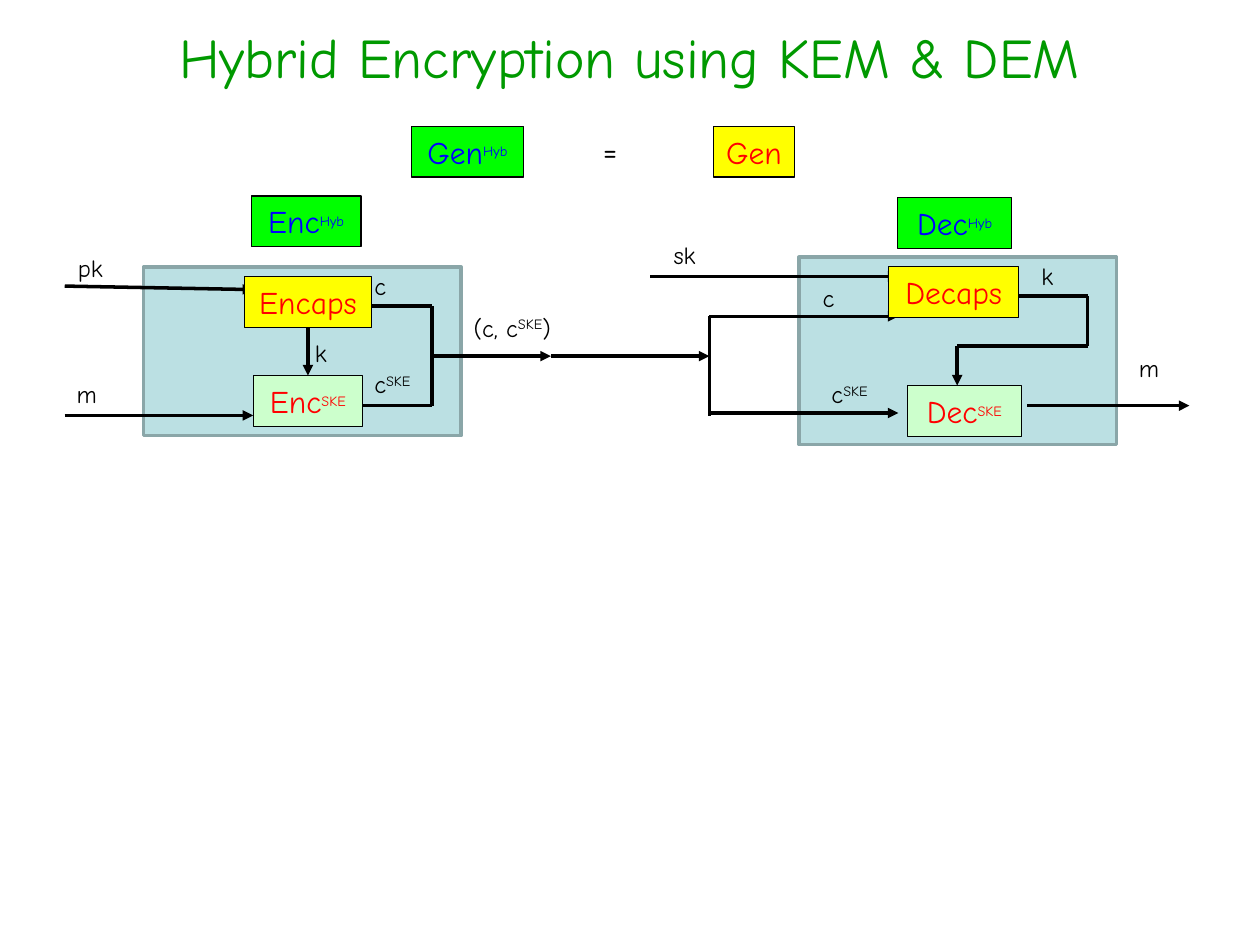
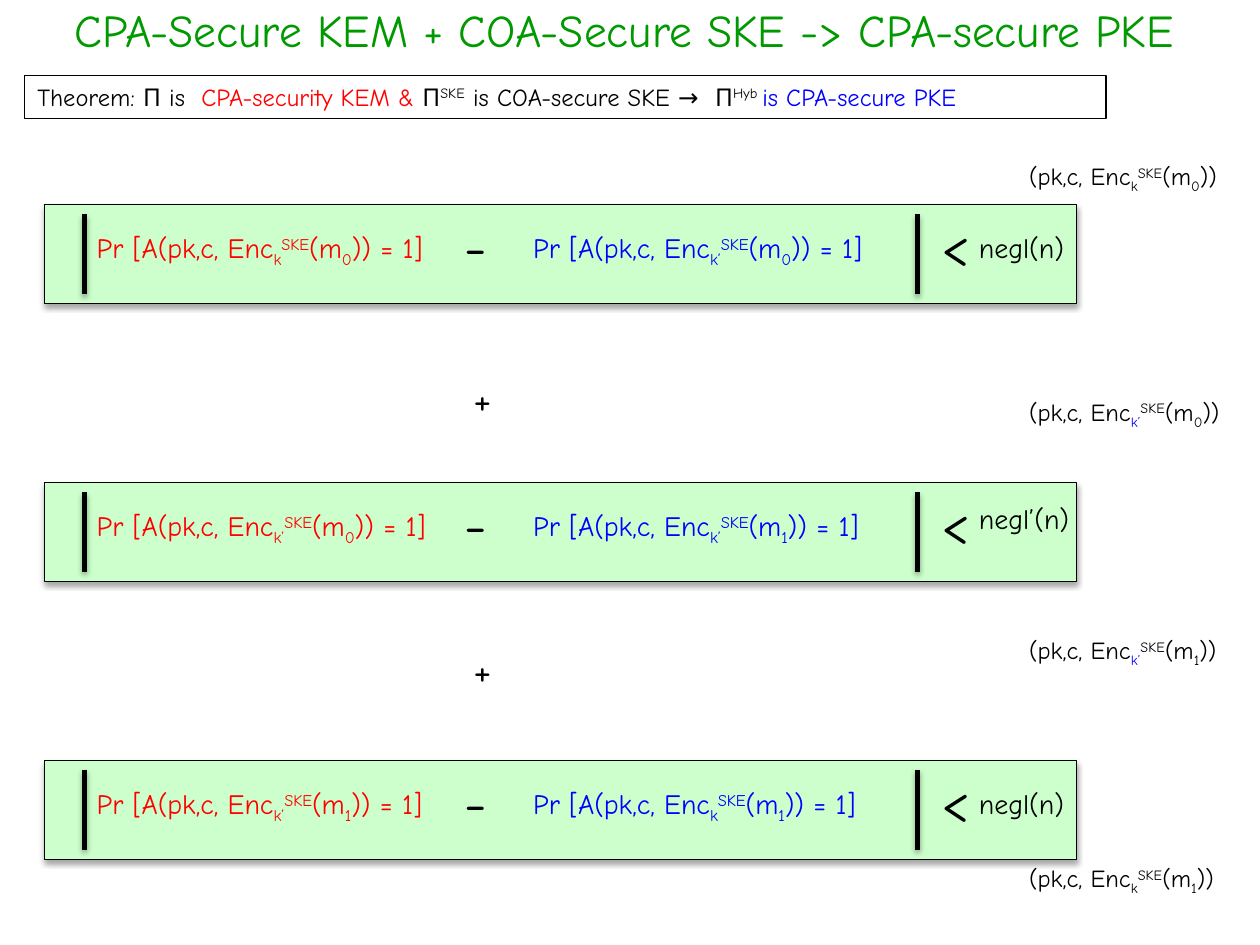
import pptx
import pptx.util
import pptx.dml.color
import pptx.enum.shapes
import pptx.enum.text
import lxml.etree
from pptx.oxml.ns import qn

Pt = pptx.util.Pt
RGB = pptx.dml.color.RGBColor
ALIGN = pptx.enum.text.PP_ALIGN

# Shared look
FONT = "Comic Neue"
BLACK = RGB(0, 0, 0)
RED = RGB(255, 0, 0)
BLUE = RGB(0, 0, 255)
TITLE = RGB(0, 0x99, 0)
GREEN = RGB(0, 255, 0)
YELLOW = RGB(255, 255, 0)
MINT = RGB(0xCC, 255, 0xCC)
TEAL = RGB(0xBB, 0xE0, 0xE3)
SLATE = RGB(0x8A, 0xA6, 0xA8)
BOX_H = 29
LABEL_H = 24.5

# In all texts "|" parts the runs; a run's first sign may set its format:
# "^" raises it, "_" lowers it, "~" spaces it widely.
MARKS = {"^": ("baseline", "30000"), "_": ("baseline", "-25000"),
         "~": ("spc", "460")}

# Slide 1: diagram content
PANELS = [(82, 152.5, 181.5, 96.5), (456.5, 147, 181.5, 107)]
BOXES = {  # name: (text, left, top, width, fill, text colour)
    "gen hyb": ("Gen|^Hyb", 235, 72.2, 64.3, GREEN, BLUE),
    "gen": ("Gen", 407.7, 72.2, 46.3, YELLOW, RED),
    "enc hyb": ("Enc|^Hyb", 143.7, 112, 62.6, GREEN, BLUE),
    "encaps": ("Encaps", 139.6, 158.2, 72.8, YELLOW, RED),
    "enc ske": ("Enc|^SKE", 144.7, 214.6, 62.6, MINT, RED),
    "decaps": ("Decaps", 507.7, 152.4, 74.5, YELLOW, RED),
    "dec ske": ("Dec|^SKE", 518.6, 220.3, 65, MINT, RED),
    "dec hyb": ("Dec|^Hyb", 513, 113, 65, GREEN, BLUE),
}
LABELS = [  # text, left, top, width
    ("m", 36.8, 213, 33),
    ("pk", 37.4, 141, 50),
    ("c", 206.8, 151.2, 40),
    ("c|^SKE", 206.8, 207.4, 57),
    ("(c, c|^SKE|)", 263.5, 175.2, 85),
    ("sk", 377.8, 133.8, 50),
    ("c", 463, 158.4, 56),
    ("k", 588, 145.5, 33),
    ("c|^SKE", 468, 213, 51),
    ("m", 643.7, 198, 33),
    ("k", 172.8, 189.4, 33),
]
WIRES = [  # corner points, arrow at the end
    ([(37, 237.4), (144.7, 237.4)], True),
    ([(37, 163.5), (144.7, 165.5)], True),
    ([(206.6, 175), (247, 175), (247, 203.5), (263.5, 203.5),
      (314.8, 203.5)], True),
    ([(206.6, 231.8), (247, 231.8), (247, 203.5)], False),
    ([(314.8, 203.5), (405.4, 203.5)], True),
    ([(405.4, 237.6), (405.4, 180.8), (513.4, 180.8)], True),
    ([(405.4, 236), (513.4, 236)], True),
    ([(371.5, 158), (513.4, 158)], True),
    ([(581, 169.3), (621.5, 169.3), (621.5, 197.8), (547, 197.8),
      (547, 220.3)], True),
    ([(587, 231.8), (679.7, 231.8)], True),
]

# Slide 2: proof content
THEOREM = [("Theorem: Π is|~ ", BLACK), ("CPA-security KEM & ", RED),
           ("Π|^SKE| is COA-secure SKE →|~ |Π|^Hyb ", BLACK),
           ("is CPA-secure PKE", BLUE)]
ROWS = [  # left (key, message), right (key, message), bound, bound offset
    (("k", 0), ("k’", 0), "negl(n)", 11.5),
    (("k’", 0), ("k’", 1), "negl’(n)", 7.2),
    (("k’", 1), ("k", 1), "negl(n)", 11.5),
]
VIEWS = [("k", 0, 88.6), ("k’", 0, 223.2), ("k’", 1, 359.3), ("k", 1, 489.6)]
PLUS_TOPS = [209.5, 364.3]
ROW_TOP, ROW_STEP = 116.8, 158.8


def write(shape, text, size=14, color=BLACK, small=None, align=ALIGN.LEFT,
          wrap=True, anchor=pptx.enum.text.MSO_ANCHOR.TOP):
    """Fill a shape with marked-up text, or with (text, colour) pairs."""
    frame = shape.text_frame
    frame.word_wrap = wrap
    frame.vertical_anchor = anchor
    para = frame.paragraphs[0]
    para.alignment = align
    for part, tint in [(text, color)] if isinstance(text, str) else text:
        for piece in part.split("|"):
            mark = MARKS.get(piece[0])
            run = para.add_run()
            run.text = piece[1:] if mark else piece
            run.font.name = FONT
            run.font.size = Pt(small if mark and small else size)
            run.font.color.rgb = tint
            if mark:
                run._r.get_or_add_rPr().set(*mark)


def label(slide, text, x, y, w, h=LABEL_H, **style):
    write(slide.shapes.add_textbox(Pt(x), Pt(y), Pt(w), Pt(h)), text, **style)


def effect(shape, shade):
    """Replace the theme shadow by none, or by a soft one below."""
    props = shape._element.spPr
    fx = lxml.etree.SubElement(props, qn("a:effectLst"))
    if shade:
        soft = lxml.etree.SubElement(
            fx, qn("a:outerShdw"), blurRad="40000", dist="23000",
            dir="5400000", rotWithShape="0")
        tone = lxml.etree.SubElement(soft, qn("a:srgbClr"), val="000000")
        lxml.etree.SubElement(tone, qn("a:alpha"), val="35000")


def rect(slide, x, y, w, h, fill=None, line=BLACK, width=0.75, shade=False):
    kind = pptx.enum.shapes.MSO_SHAPE.RECTANGLE
    shape = slide.shapes.add_shape(kind, Pt(x), Pt(y), Pt(w), Pt(h))
    if fill is None:
        shape.fill.background()
    else:
        shape.fill.solid()
        shape.fill.fore_color.rgb = fill
    shape.line.color.rgb = line
    shape.line.width = Pt(width)
    effect(shape, shade)
    return shape


def wire(slide, start, end, width=2, arrow=False, shade=False):
    kind = pptx.enum.shapes.MSO_CONNECTOR.STRAIGHT
    line = slide.shapes.add_connector(kind, *map(Pt, start + end))
    line.line.color.rgb = BLACK
    line.line.width = Pt(width)
    if arrow:
        lxml.etree.SubElement(line.line._get_or_add_ln(), qn("a:tailEnd"),
                              type="triangle")
    effect(line, shade)
    return line


def title(slide, text, x, y, w, size):
    label(slide, text, x, y, w, 58, size=size, color=TITLE,
          align=ALIGN.CENTER)


def draw_scheme(slide):
    title(slide, "Hybrid Encryption using KEM & DEM", 0, 9.4, 720, 32)
    label(slide, "=", 337.4, 71.3, 28, 29, size=18)
    for panel in PANELS:
        rect(slide, *panel, fill=TEAL, line=SLATE, width=2)
    for points, arrow in WIRES:
        last = len(points) - 2
        for i, (start, end) in enumerate(zip(points, points[1:])):
            wire(slide, start, end, arrow=arrow and i == last)
    for item in LABELS:
        label(slide, *item)

    # Algorithm boxes, and the key passed between two of them
    made = {}
    for name, (text, x, y, w, fill, color) in BOXES.items():
        made[name] = rect(slide, x, y, w, BOX_H, fill=fill)
        write(made[name], text, size=18, small=14, color=color, wrap=False,
              align=ALIGN.CENTER, anchor=pptx.enum.text.MSO_ANCHOR.MIDDLE)
    link = wire(slide, (176, 187.2), (176, 214.6), arrow=True)
    link.begin_connect(made["encaps"], 2)
    link.end_connect(made["enc ske"], 0)


def chance(key, msg):
    return f"Pr [A(pk,c, Enc|_{key}|^SKE|(m|_{msg}|)) = 1]"


def draw_proof(slide):
    title(slide, "CPA-Secure KEM + COA-Secure SKE -> CPA-secure PKE ",
          -17, -2.2, 756.7, 26)
    write(rect(slide, 14.2, 43.2, 617.8, LABEL_H), THEOREM)

    # One inequality per row
    for i, (left, right, bound, drop) in enumerate(ROWS):
        y = ROW_TOP + i * ROW_STEP
        rect(slide, 25.3, y, 589.7, 56.7, fill=MINT, shade=True)
        label(slide, chance(*left), 48.2, y + 11.5, 232, 27, size=16,
              color=RED)
        label(slide, chance(*right), 297.6, y + 11.5, 227, 27, size=16,
              color=BLUE)
        label(slide, "-", 258.5, y, 28, 46, size=32)
        label(slide, "<", 530.8, y, 45, 46, size=32)
        label(slide, bound, 552.3, y + drop, 120, 27, size=16)
        for x in (48.2, 524.2):
            wire(slide, (x, y + 5.6), (x, y + 51.1), width=3, shade=True)
    for y in PLUS_TOPS:
        label(slide, "+", 263.5, y, 40, 36, size=24)

    # What the adversary sees, game by game
    for key, msg, y in VIEWS:
        tint = BLACK if key == "k" else BLUE
        label(slide, [("(pk,c, Enc", BLACK), (f"_{key}", tint),
                      (f"^SKE|(m|_{msg}|))", BLACK)], 581, y, 137)


def main():
    deck = pptx.Presentation()
    deck.slide_width, deck.slide_height = Pt(720), Pt(540)
    for draw in (draw_scheme, draw_proof):
        draw(deck.slides.add_slide(deck.slide_layouts[6]))
    deck.save("out.pptx")


if __name__ == "__main__":
    main()
